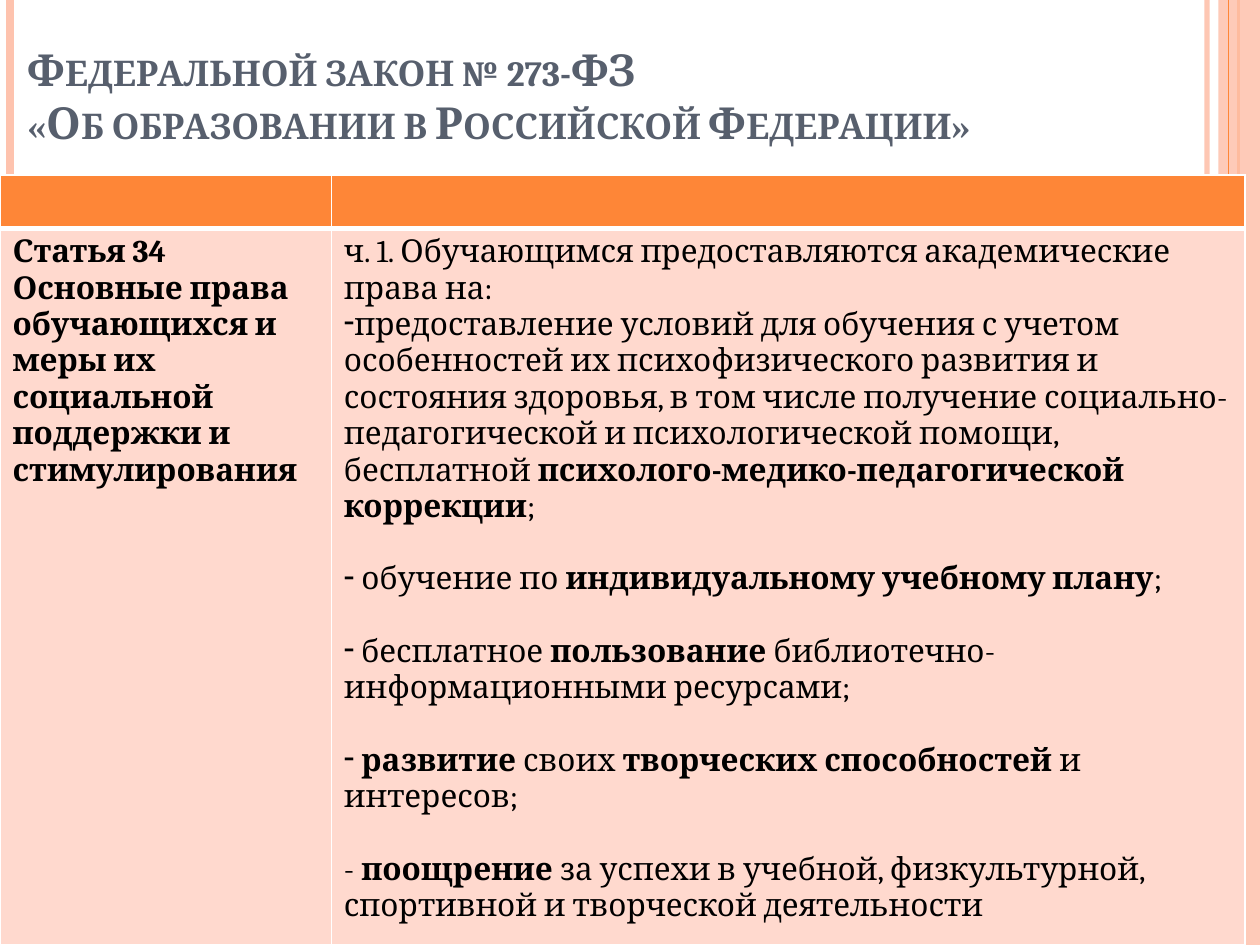
from dataclasses import dataclass

import lxml.etree
import pptx
import pptx.dml.color
import pptx.enum.shapes
import pptx.enum.text
import pptx.oxml.ns
import pptx.util

COLORS = {
    "orange": "FE8637",
    "peach": "FEC3AE",
    "cell": "FFD9CE",
    "title": "575F6D",
    "text": "000000",
    "border": "FFFFFF",
}
FONT = "Cambria"
TEXT_SIZE = 18
BLANK_LINE = 20.7
SLIDE_WIDTH, SLIDE_HEIGHT = 25.4, 19.05
Cm = pptx.util.Cm
Pt = pptx.util.Pt
qn = pptx.oxml.ns.qn


@dataclass
class Stripe:
    x: float
    weight: float
    color: str
    opacity: int = 100


@dataclass
class Item:
    runs: list[tuple[str, bool]]
    bullet: str = ""
    gap: float = 0


LEFT_STRIPES = [Stripe(24.33, 3, "peach", 93), Stripe(0.2, 4.5, "peach"),
                Stripe(24.97, 1.5, "orange")]
TOP_STRIPE = Stripe(24.77, 0.75, "orange")

TITLE_LINES = ["Федеральной закон № 273-ФЗ", "«Об образовании в Российской Федерации»"]

ARTICLE = [
    Item([("Статья 34", True)]),
    Item([("Основные права обучающихся и меры их социальной поддержки и стимулирования", True)]),
]
RIGHTS = [
    Item([("ч. 1. Обучающимся предоставляются академические права на:", False)]),
    Item([("предоставление условий для обучения с учетом особенностей их психофизического "
           "развития и состояния здоровья, в том числе получение социально-педагогической "
           "и психологической помощи, бесплатной ", False),
          ("психолого-медико-педагогической коррекции", True), (";", False)], "-"),
    Item([(" обучение по ", False), ("индивидуальному учебному плану", True),
          (";", False)], "-", BLANK_LINE),
    Item([(" бесплатное ", False), ("пользование", True),
          (" библиотечно-информационными ресурсами;", False)], "-", BLANK_LINE),
    Item([(" ", False), ("развитие", True), (" своих ", False),
          ("творческих способностей ", True), ("и интересов;", False)], "-", BLANK_LINE),
    Item([("- ", False), ("поощрение", True),
          (" за успехи в учебной, физкультурной, спортивной и творческой деятельности", False)],
         gap=BLANK_LINE),
]


def rgb(name: str) -> pptx.dml.color.RGBColor:
    return pptx.dml.color.RGBColor.from_string(COLORS[name])


def set_opacity(shape, percent: int) -> None:
    color = next(shape.element.spPr.iter(qn("a:srgbClr")))
    lxml.etree.SubElement(color, qn("a:alpha"), val=str(percent * 1000))


def style_run(run, size: float, color: str, bold: bool) -> None:
    run.font.name = FONT
    run.font.size = Pt(size)
    run.font.bold = bold
    run.font.color.rgb = rgb(color)


def draw_stripe(slide, stripe: Stripe) -> None:
    connector = slide.shapes.add_connector(
        pptx.enum.shapes.MSO_CONNECTOR.STRAIGHT,
        Cm(stripe.x), Cm(0), Cm(stripe.x), Cm(SLIDE_HEIGHT))
    connector.line.color.rgb = rgb(stripe.color)
    connector.line.width = Pt(stripe.weight)
    if stripe.opacity < 100:
        set_opacity(connector, stripe.opacity)
    lxml.etree.SubElement(connector.element.spPr, qn("a:effectLst"))


def draw_band(slide) -> None:
    band = slide.shapes.add_shape(
        pptx.enum.shapes.MSO_SHAPE.RECTANGLE, Cm(24.56), Cm(0), Cm(0.84), Cm(SLIDE_HEIGHT))
    band.shadow.inherit = False
    band.fill.solid()
    band.fill.fore_color.rgb = rgb("peach")
    band.line.fill.background()
    set_opacity(band, 87)


def write_title(slide) -> None:
    title = slide.shapes.title
    title.left, title.top, title.width, title.height = Cm(0.3), Cm(0.76), Cm(24.79), Cm(2.36)
    frame = title.text_frame
    frame.word_wrap = True
    frame.auto_size = pptx.enum.text.MSO_AUTO_SIZE.NONE
    frame.vertical_anchor = pptx.enum.text.MSO_ANCHOR.BOTTOM
    paragraph = frame.paragraphs[0]
    paragraph.alignment = pptx.enum.text.PP_ALIGN.LEFT
    paragraph.line_spacing = 1.0
    for index, line in enumerate(TITLE_LINES):
        if index:
            paragraph.add_line_break()
        run = paragraph.add_run()
        run.text = line
        style_run(run, 25.2, "title", True)
        run.font._element.set("cap", "small")
    slide.shapes._spTree.append(title.element)


def set_borders(cell, weights: dict[str, float]) -> None:
    properties = cell._tc.get_or_add_tcPr()
    for index, (side, weight) in enumerate(weights.items()):
        line = lxml.etree.Element(qn(f"a:ln{side}"), w=str(Pt(weight)))
        fill = lxml.etree.SubElement(line, qn("a:solidFill"))
        lxml.etree.SubElement(fill, qn("a:srgbClr"), val=COLORS["border"])
        properties.insert(index, line)


def write_cell(cell, items: list[Item]) -> None:
    frame = cell.text_frame
    for index, item in enumerate(items):
        paragraph = frame.add_paragraph() if index else frame.paragraphs[0]
        paragraph.space_before = Pt(item.gap)
        if item.bullet:
            properties = paragraph._p.get_or_add_pPr()
            properties.set("marL", "0")
            properties.set("indent", "0")
            lxml.etree.SubElement(properties, qn("a:buFontTx"))
            lxml.etree.SubElement(properties, qn("a:buChar"), char=item.bullet)
        for text, bold in item.runs:
            run = paragraph.add_run()
            run.text = text
            style_run(run, TEXT_SIZE, "text", bold)


def draw_table(slide) -> None:
    widths, heights = [6.68, 18.42], [1.07, 14.45]
    table = slide.shapes.add_table(
        2, 2, Cm(0), Cm(3.53), Cm(sum(widths)), Cm(sum(heights))).table
    for column, width in zip(table.columns, widths):
        column.width = Cm(width)
    for row, height in zip(table.rows, heights):
        row.height = Cm(height)
    rows = [
        ("orange", {"L": 1, "R": 1, "T": 1, "B": 3}, [[], []]),
        ("cell", {"L": 1, "R": 1, "T": 3, "B": 1}, [ARTICLE, RIGHTS]),
    ]
    for row, (color, borders, contents) in zip(table.rows, rows):
        for cell, items in zip(row.cells, contents):
            cell.fill.solid()
            cell.fill.fore_color.rgb = rgb(color)
            set_borders(cell, borders)
            write_cell(cell, items)


def main() -> None:
    presentation = pptx.Presentation()
    presentation.slide_width = Cm(SLIDE_WIDTH)
    presentation.slide_height = Cm(SLIDE_HEIGHT)
    slide = presentation.slides.add_slide(presentation.slide_layouts.get_by_name("Title Only"))
    for stripe in LEFT_STRIPES:
        draw_stripe(slide, stripe)
    draw_band(slide)
    draw_stripe(slide, TOP_STRIPE)
    write_title(slide)
    draw_table(slide)
    presentation.save("out.pptx")


if __name__ == "__main__":
    main()
